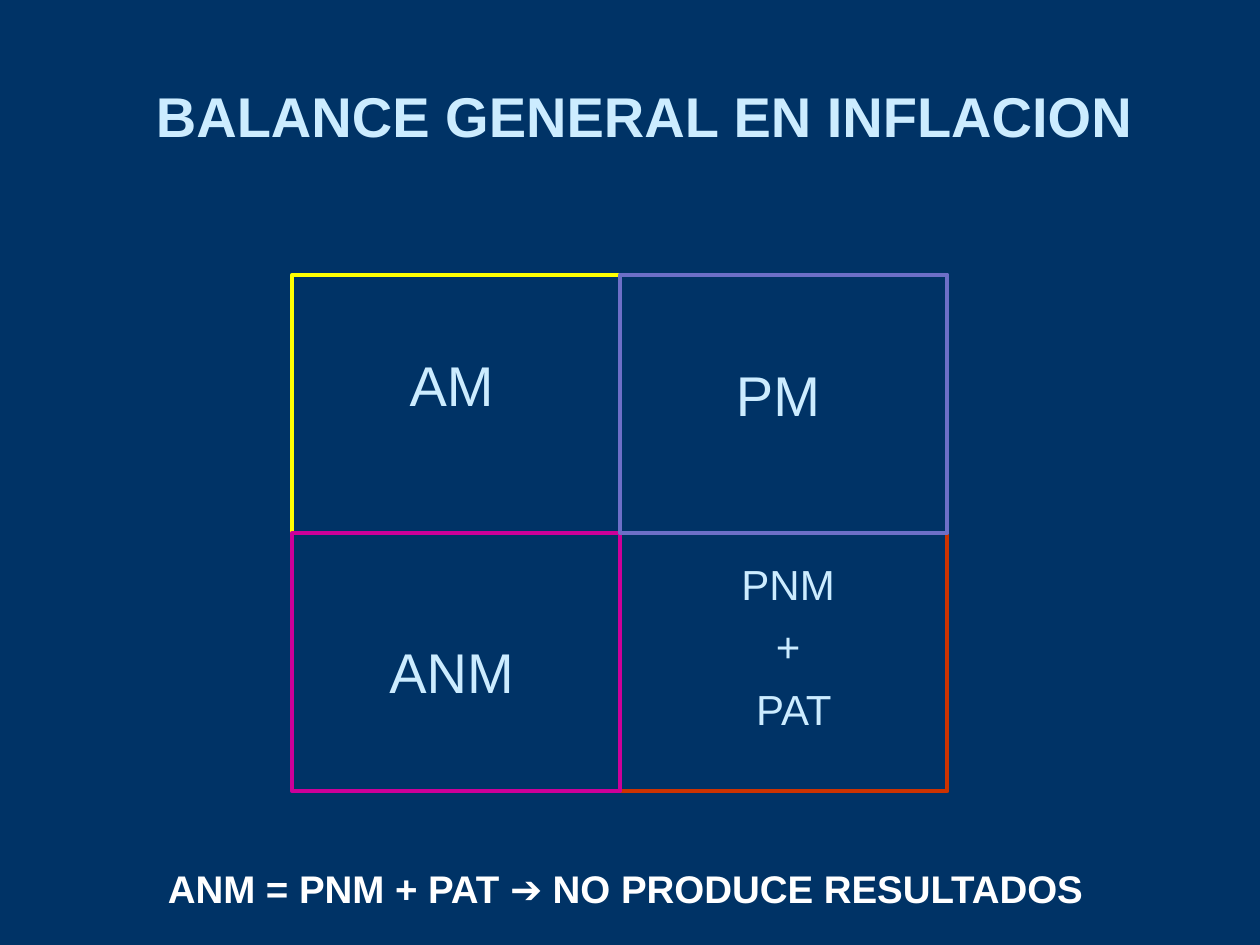
import pptx
import pptx.dml.color
import pptx.enum.shapes
import pptx.enum.text
import pptx.util
from dataclasses import dataclass

Inches, Pt = pptx.util.Inches, pptx.util.Pt
RGBColor = pptx.dml.color.RGBColor

NAVY = RGBColor(0x00, 0x33, 0x66)
PALE_BLUE = RGBColor(0xCC, 0xEC, 0xFF)
WHITE = RGBColor(0xFF, 0xFF, 0xFF)
ORANGE = RGBColor(0xCC, 0x33, 0x00)
YELLOW = RGBColor(0xFF, 0xFF, 0x00)
MAGENTA = RGBColor(0xCC, 0x00, 0x99)
VIOLET = RGBColor(0x6D, 0x6F, 0xC7)

GRID_LEFT, GRID_TOP = 2.32, 2.18
CELL_W, CELL_H = 2.6, 2.05
LABEL_W = 1.73


@dataclass
class Quadrant:
    col: int
    row: int
    color: RGBColor


@dataclass
class Label:
    text: str
    left: float
    top: float
    width: float
    height: float
    size: int = 32
    color: RGBColor = PALE_BLUE
    bold: bool = False


# Back to front, so that later outlines cover the shared edges
QUADRANTS = [
    Quadrant(1, 1, ORANGE),
    Quadrant(0, 0, YELLOW),
    Quadrant(0, 1, MAGENTA),
    Quadrant(1, 0, VIOLET),
]

TITLE = Label("BALANCE GENERAL EN INFLACION", 0.9, 0.6, 8.43, 0.63, bold=True)
LABELS = [
    Label("AM", 2.72, 2.73, LABEL_W, 0.63),
    Label("ANM", 2.72, 5.01, LABEL_W, 0.63),
    Label("PNM\n+\n PAT", 5.39, 4.38, LABEL_W, 1.5, size=24),
    Label("PM", 5.31, 2.81, LABEL_W, 0.63),
    Label("ANM = PNM + PAT ➔ NO PRODUCE RESULTADOS", 0.2, 6.82, 9.53, 0.47,
          size=22, color=WHITE, bold=True),
]


def draw_quadrant(s: pptx.slide.Slide, q: Quadrant) -> None:
    sp = s.shapes.add_shape(
        pptx.enum.shapes.MSO_SHAPE.RECTANGLE,
        Inches(GRID_LEFT + q.col * CELL_W), Inches(GRID_TOP + q.row * CELL_H),
        Inches(CELL_W), Inches(CELL_H))
    sp.shadow.inherit = False
    sp.fill.background()
    sp.line.color.rgb = q.color
    sp.line.width = Pt(2.25)


def write_text(sp: pptx.shapes.autoshape.Shape, label: Label) -> None:
    tf = sp.text_frame
    tf.text = label.text
    tf.word_wrap = True
    tf.auto_size = pptx.enum.text.MSO_AUTO_SIZE.NONE
    tf.vertical_anchor = pptx.enum.text.MSO_ANCHOR.TOP
    for i, p in enumerate(tf.paragraphs):
        p.alignment = pptx.enum.text.PP_ALIGN.CENTER
        p.space_before = Pt(7 if i else 0)
        for r in p.runs:
            r.font.name = "Arial"
            r.font.size = Pt(label.size)
            r.font.bold = label.bold
            r.font.color.rgb = label.color


def draw_label(s: pptx.slide.Slide, label: Label) -> None:
    sp = s.shapes.add_textbox(Inches(label.left), Inches(label.top),
                              Inches(label.width), Inches(label.height))
    write_text(sp, label)


def draw_title(s: pptx.slide.Slide, label: Label) -> None:
    sp = s.shapes.title
    sp.left, sp.top = Inches(label.left), Inches(label.top)
    sp.width, sp.height = Inches(label.width), Inches(label.height)
    write_text(sp, label)


def main() -> None:
    prs = pptx.Presentation()
    prs.slide_width, prs.slide_height = Inches(10), Inches(7.5)
    s = prs.slides.add_slide(prs.slide_layouts[5])
    s.background.fill.solid()
    s.background.fill.fore_color.rgb = NAVY

    draw_title(s, TITLE)

    # Balance sheet quadrants
    for q in QUADRANTS:
        draw_quadrant(s, q)

    # Quadrant names and conclusion
    for label in LABELS:
        draw_label(s, label)

    prs.save("out.pptx")


if __name__ == "__main__":
    main()
